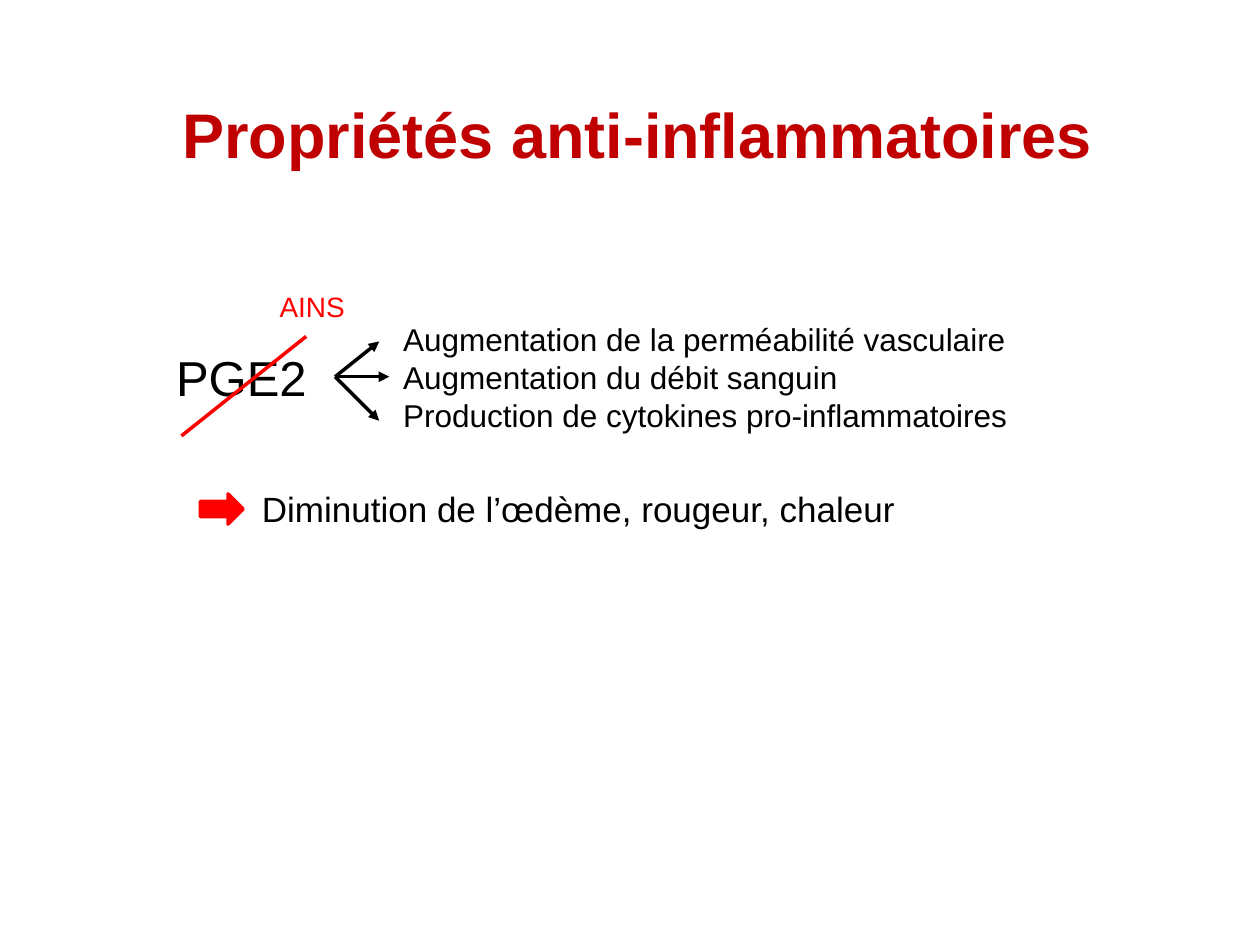
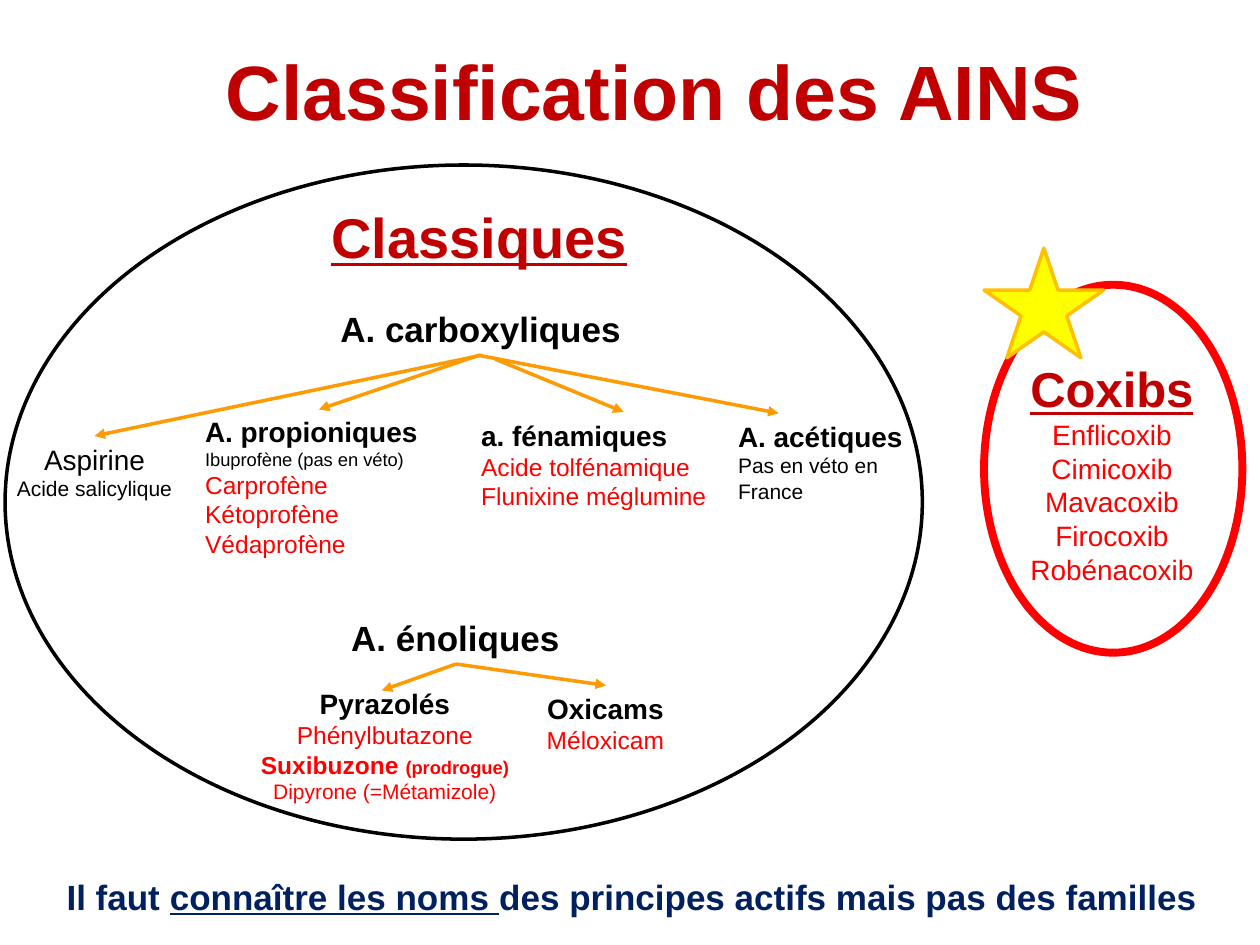
from pptx import Presentation
from pptx.dml.color import RGBColor as RGB
from pptx.enum.shapes import MSO_CONNECTOR as CONNECTOR, MSO_SHAPE as SHAPE
from pptx.enum.text import MSO_ANCHOR as ANCHOR, MSO_AUTO_SIZE as AUTO_SIZE, PP_ALIGN as ALIGN
from pptx.oxml.ns import qn
from pptx.util import Inches, Pt
from lxml.etree import SubElement


class Theme:
    font = "Arial"
    title = RGB(0xC0, 0x00, 0x00)
    black = RGB(0x00, 0x00, 0x00)
    red = RGB(0xFF, 0x00, 0x00)
    orange = RGB(0xFE, 0x9B, 0x03)
    navy = RGB(0x00, 0x20, 0x60)
    yellow = RGB(0xFF, 0xFF, 0x00)
    amber = RGB(0xFF, 0xC0, 0x00)
    thin, thick = Pt(2), Pt(4.5)
    bold, underlined = {"bold": True}, {"underline": True}
    styles = {
        "title": {"size": Pt(36), "color": title, **bold},
        "large title": {"size": Pt(44), "color": title, **bold},
        "class": {"size": Pt(32), "color": title, **bold, **underlined},
        "small class": {"size": Pt(28), "color": title, **bold, **underlined},
        "mediator": {"size": Pt(28), "color": black},
        "conclusion": {"size": Pt(20), "color": black},
        "effect": {"size": Pt(18), "color": black},
        "acid": {"size": Pt(20), "color": black, **bold},
        "family": {"size": Pt(16), "color": black, **bold},
        "plain family": {"size": Pt(16), "color": black},
        "note": {"size": Pt(12), "color": black},
        "small note": {"size": Pt(10.5), "color": black},
        "large drug": {"size": Pt(16), "color": red},
        "drug": {"size": Pt(14), "color": red},
        "bold drug": {"size": Pt(14), "color": red, **bold},
        "small drug": {"size": Pt(12), "color": red},
        "drug note": {"size": Pt(10.5), "color": red, **bold},
        "reminder": {"size": Pt(20), "color": navy, **bold},
        "reminder key": {"size": Pt(20), "color": navy, **bold, **underlined},
    }


presentation = Presentation()
presentation.slide_width, presentation.slide_height = Inches(10), Inches(7.5)
blank_layout = presentation.slide_layouts[6]
properties_slide = presentation.slides.add_slide(blank_layout)
classes_slide = presentation.slides.add_slide(blank_layout)

# Places are given on a grid of 100 columns and 75 rows.
COLUMN = presentation.slide_width / 100
ROW = presentation.slide_height / 75


def add_text(slide, box, paragraphs, align=ALIGN.LEFT, wrap=True, **frame_format):
    """Each paragraph is a list of (text, style name) runs."""
    left, top, width, height = box
    shape = slide.shapes.add_textbox(
        round(left * COLUMN), round(top * ROW), round(width * COLUMN), round(height * ROW))
    frame = shape.text_frame
    frame_format = {"word_wrap": wrap, "auto_size": AUTO_SIZE.SHAPE_TO_FIT_TEXT, **frame_format}
    for name, value in frame_format.items():
        setattr(frame, name, value)
    for index, runs in enumerate(paragraphs):
        paragraph = frame.add_paragraph() if index else frame.paragraphs[0]
        paragraph.alignment = align
        for text, style in runs:
            run = paragraph.add_run()
            run.text = text
            run.font.name = Theme.font
            for name, value in Theme.styles[style].items():
                if name == "color":
                    run.font.color.rgb = value
                else:
                    setattr(run.font, name, value)
    return frame


def add_line(slide, start, end, color, arrow=True):
    line = slide.shapes.add_connector(
        CONNECTOR.STRAIGHT, round(start[0] * COLUMN), round(start[1] * ROW),
        round(end[0] * COLUMN), round(end[1] * ROW))
    line.line.color.rgb = color
    line.line.width = Theme.thin
    if arrow:
        SubElement(line.line._get_or_add_ln(), qn("a:tailEnd"), type="triangle")
    SubElement(line._element.spPr, qn("a:effectLst"))


# Titles
for slide, box, text, style in (
    (properties_slide, (10, 7.8, 81.2, 6.3), "Propriétés anti-inflammatoires", "title"),
    (classes_slide, (10.6, 1.3, 82.7, 12.5), "Classification des AINS", "large title"),
):
    title = add_text(slide, box, [[(text, style)]], ALIGN.CENTER,
                     auto_size=AUTO_SIZE.NONE, vertical_anchor=ANCHOR.MIDDLE)
    title.paragraphs[0].line_spacing = 0.9

# Anti-inflammatory properties
for box, text, style in (
    ((13, 27.1, 13.6, 5.7), "PGE2", "mediator"),
    ((19.8, 38.2, 52.7, 4.4), "Diminution de l’œdème, rougeur, chaleur", "conclusion"),
    ((21.2, 22.5, 7.2, 3.7), "AINS", "large drug"),
):
    add_text(properties_slide, box, [[(text, style)]], wrap=False)

effects = (
    "Augmentation de la perméabilité vasculaire",
    "Augmentation du débit sanguin",
    "Production de cytokines pro-inflammatoires",
)
add_text(properties_slide, (26.6, 24.9, 61.2, 10.1),
         [[(effect, "effect")] for effect in effects], margin_left=Inches(0.54))
for tip in ((30.1, 27.1), (30.9, 29.9), (30.1, 33.4)):
    add_line(properties_slide, (26.6, 29.9), tip, Theme.black)
add_line(properties_slide, (14.4, 34.6), (24.3, 26.7), Theme.red, arrow=False)

# Classification: headings and drug families
add_text(classes_slide, (25.3, 15.6, 25.7, 6.4), [[("Classiques", "class")]], wrap=False)

coxibs = ("Enflicoxib", "Cimicoxib", "Mavacoxib", "Firocoxib", "Robénacoxib")
for box, paragraphs in (
    ((21.8, 23.9, 32.7, 4.4), [[("A. carboxyliques", "acid")]]),
    ((21.6, 48.4, 29.1, 4.4), [[("A. énoliques", "acid")]]),
    ((-0.9, 34.6, 16.8, 5.7), [
        [("Aspirine", "plain family")],
        [("Acide salicylique", "note")],
    ]),
    ((73.7, 28, 29.1, 22.6), [
        [("Coxibs", "small class")],
        *([(coxib, "large drug")] for coxib in coxibs),
    ]),
    ((39.8, 54.4, 16.5, 6.1), [
        [("Oxicams", "family")],
        [("Méloxicam", "drug")],
    ]),
    ((19.3, 54, 22.5, 10.4), [
        [("Pyrazolés", "family")],
        [("Phénylbutazone", "drug")],
        [("Suxibuzone ", "bold drug"), ("(prodrogue)", "drug note")],
        [("Dipyrone (=Métamizole)", "small drug")],
    ]),
):
    add_text(classes_slide, box, paragraphs, ALIGN.CENTER)

for box, paragraphs in (
    ((15.3, 32.4, 24, 12.6), [
        [("A. propioniques", "family")],
        [("Ibuprofène (pas en véto)", "small note")],
        [("Carprofène", "drug")],
        [("Kétoprofène", "drug")],
        [("Védaprofène", "drug")],
    ]),
    ((37.2, 32.7, 24.5, 11.1), [
        [("a. fénamiques", "family")],
        [("Acide tolfénamique", "drug")],
        [("Flunixine méglumine", "drug")],
    ]),
    ((57.6, 32.8, 17.6, 7.7), [
        [("A. acétiques", "family")],
        [("Pas en véto en France", "note")],
    ]),
    ((4.3, 69, 92.8, 4.4), [[
        ("Il faut ", "reminder"),
        ("connaître les noms ", "reminder key"),
        ("des principes actifs mais pas des familles", "reminder"),
    ]]),
):
    add_text(classes_slide, box, paragraphs)

# Classification: branches from each acid to its families
for start, end in (
    ((38.2, 28.2), (7.5, 34.6)),
    ((38, 28.2), (25.3, 32.5)),
    ((39.3, 28.5), (49.5, 32.7)),
    ((38, 28.2), (61.8, 32.8)),
    ((36.2, 52.7), (30.3, 54.8)),
    ((36.2, 52.7), (48.1, 54.4)),
):
    add_line(classes_slide, start, end, Theme.orange)

# Result arrow, class outlines and star
for slide, kind, (left, top, width, height), fill, outline, weight in (
    (properties_slide, SHAPE.RIGHT_ARROW, (15.9, 39.2, 3.4, 2.4), Theme.red, Theme.red, Theme.thin),
    (classes_slide, SHAPE.OVAL, (78.1, 22.6, 20.5, 29.2), None, Theme.red, Theme.thick),
    (classes_slide, SHAPE.OVAL, (0.4, 13.1, 72.8, 53.5), None, Theme.black, Theme.thin),
    (classes_slide, SHAPE.STAR_5_POINT, (78.1, 19.7, 9.5, 8.7), Theme.yellow, Theme.amber, Theme.thin),
):
    shape = slide.shapes.add_shape(
        kind, round(left * COLUMN), round(top * ROW), round(width * COLUMN), round(height * ROW))
    shape.shadow.inherit = False
    shape.line.color.rgb = outline
    shape.line.width = weight
    if fill is None:
        shape.fill.background()
    else:
        shape.fill.solid()
        shape.fill.fore_color.rgb = fill

presentation.save("out.pptx")
